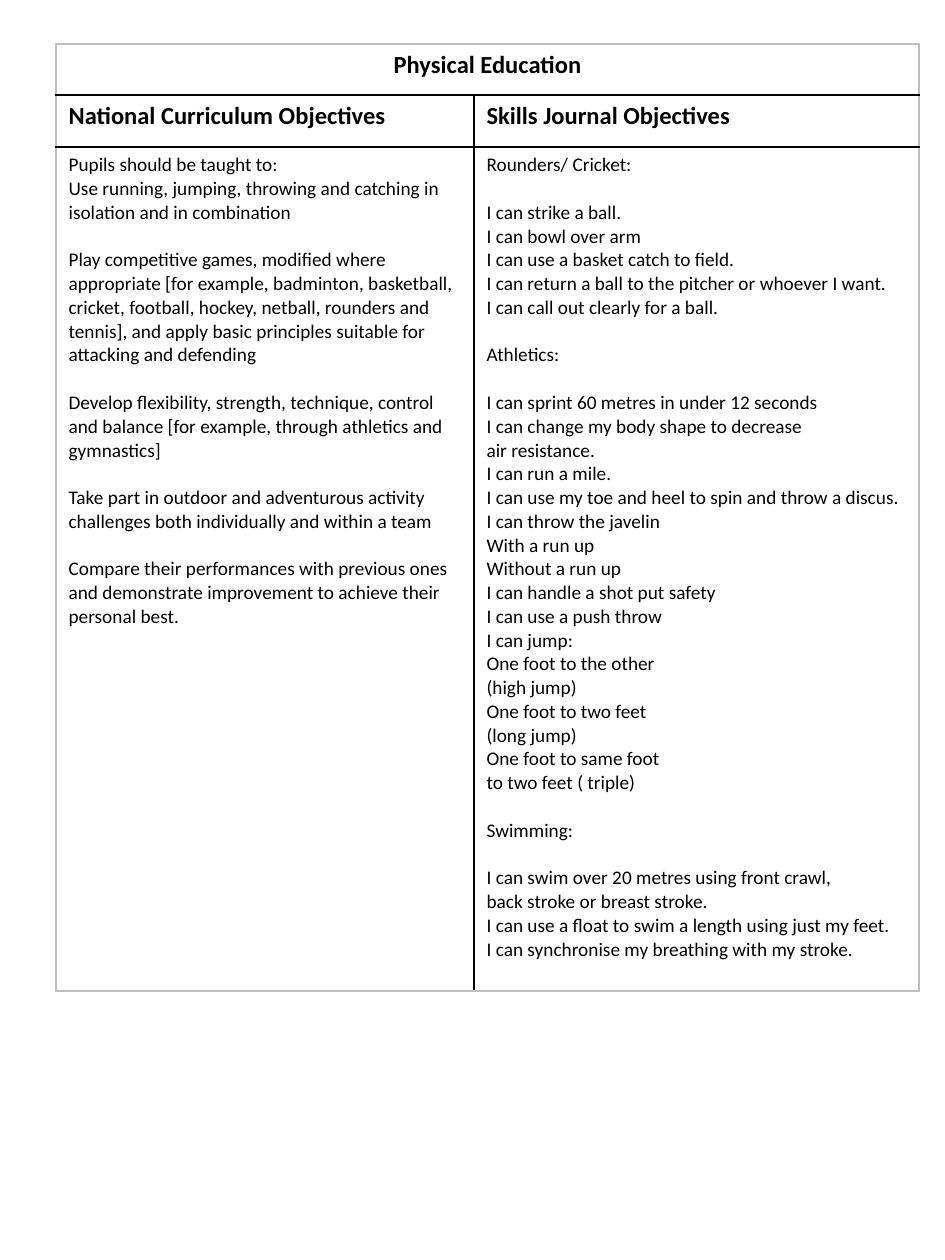
from lxml import etree
from pptx import Presentation
from pptx.dml.color import RGBColor
from pptx.enum.text import PP_ALIGN
from pptx.oxml.ns import qn
from pptx.util import Pt

PX = 914400 / 126
CENTER, LEFT = PP_ALIGN.CENTER, PP_ALIGN.LEFT
BLACK, GREY = "000000", "BFBFBF"
LINE_GAP = 13.6

# Each inner list is a block; blocks are set apart by one line of space
curriculum = [
    ["Pupils should be taught to:",
     "Use running, jumping, throwing and catching in isolation and in combination"],
    ["Play competitive games, modified where appropriate [for example, badminton, "
     "basketball, cricket, football, hockey, netball, rounders and tennis], and apply "
     "basic principles suitable for attacking and defending"],
    ["Develop flexibility, strength, technique, control and balance "
     "[for example, through athletics and gymnastics]"],
    ["Take part in outdoor and adventurous activity challenges both individually "
     "and within a team"],
    ["Compare their performances with previous ones and demonstrate improvement "
     "to achieve their personal best."],
]
skills = [
    ["Rounders/ Cricket:"],
    ["I can strike a ball.",
     "I can bowl over arm",
     "I can use a basket catch to field.",
     "I can return a ball to the pitcher or whoever I want.",
     "I can call out clearly for a ball."],
    ["Athletics:"],
    ["I can sprint 60 metres in under 12 seconds",
     "I can change my body shape to decrease\vair resistance.",
     "I can run a mile.",
     "I can use my toe and heel to spin and throw a discus.",
     "I can throw the javelin",
     "With a run up",
     "Without a run up",
     "I can handle a shot put safety",
     "I can use a push throw",
     "I can jump:",
     "One foot to the other",
     "(high jump)",
     "One foot to two feet",
     "(long jump)",
     "One foot to same foot",
     "to two feet ( triple)"],
    ["Swimming:"],
    ["I can swim over 20 metres using front crawl,\vback stroke or breast stroke.",
     "I can use a float to swim a length using just my feet.",
     "I can synchronise my breathing with my stroke."],
]


def color(value):
    return RGBColor.from_string(value)


def fill_cell(cell, blocks, size, bold=False, align=LEFT):
    frame = cell.text_frame
    for block_index, block in enumerate(blocks):
        for line_index, line in enumerate(block):
            first = block_index == 0 and line_index == 0
            paragraph = frame.paragraphs[0] if first else frame.add_paragraph()
            paragraph.text = line
            paragraph.alignment = align
            paragraph.font.name = "Calibri"
            paragraph.font.size = Pt(size)
            paragraph.font.bold = bold
            paragraph.font.color.rgb = color(BLACK)
            if block_index > 0 and line_index == 0:
                paragraph.space_before = Pt(LINE_GAP)


# Slide
presentation = Presentation()
presentation.slide_width = round(945 * PX)
presentation.slide_height = round(1260 * PX)
slide = presentation.slides.add_slide(presentation.slide_layouts[6])

# Table grid
column_widths = [418, 445]
row_heights = [51, 52, 844]
box = [56, 44, sum(column_widths), sum(row_heights)]
table = slide.shapes.add_table(3, 2, *[round(value * PX) for value in box]).table
table.first_row = False
table.horz_banding = False
for column, width in zip(table.columns, column_widths):
    column.width = round(width * PX)
for row, height in zip(table.rows, row_heights):
    row.height = round(height * PX)

# Grey frame, black inner lines, no fill
for row in range(3):
    for column in range(2):
        cell = table.cell(row, column)
        properties = cell._tc.get_or_add_tcPr()
        sides = {"a:lnL": column == 0, "a:lnR": column == 1,
                 "a:lnT": row == 0, "a:lnB": row == 2}
        for tag, outer in sides.items():
            line = etree.SubElement(properties, qn(tag), w=str(Pt(1)))
            solid = etree.SubElement(line, qn("a:solidFill"))
            etree.SubElement(solid, qn("a:srgbClr"), val=GREY if outer else BLACK)
        cell.fill.background()
table.cell(0, 0).merge(table.cell(0, 1))
title_properties = table.cell(0, 0)._tc.tcPr
title_properties.find(qn("a:lnR")).find(".//" + qn("a:srgbClr")).set("val", GREY)

# Headings and objectives
fill_cell(table.cell(0, 0), [["Physical Education"]], 14, True, CENTER)
fill_cell(table.cell(1, 0), [["National Curriculum Objectives"]], 14, True)
fill_cell(table.cell(1, 1), [["Skills Journal Objectives"]], 14, True)
fill_cell(table.cell(2, 0), curriculum, 11)
fill_cell(table.cell(2, 1), skills, 11)

presentation.save("out.pptx")
